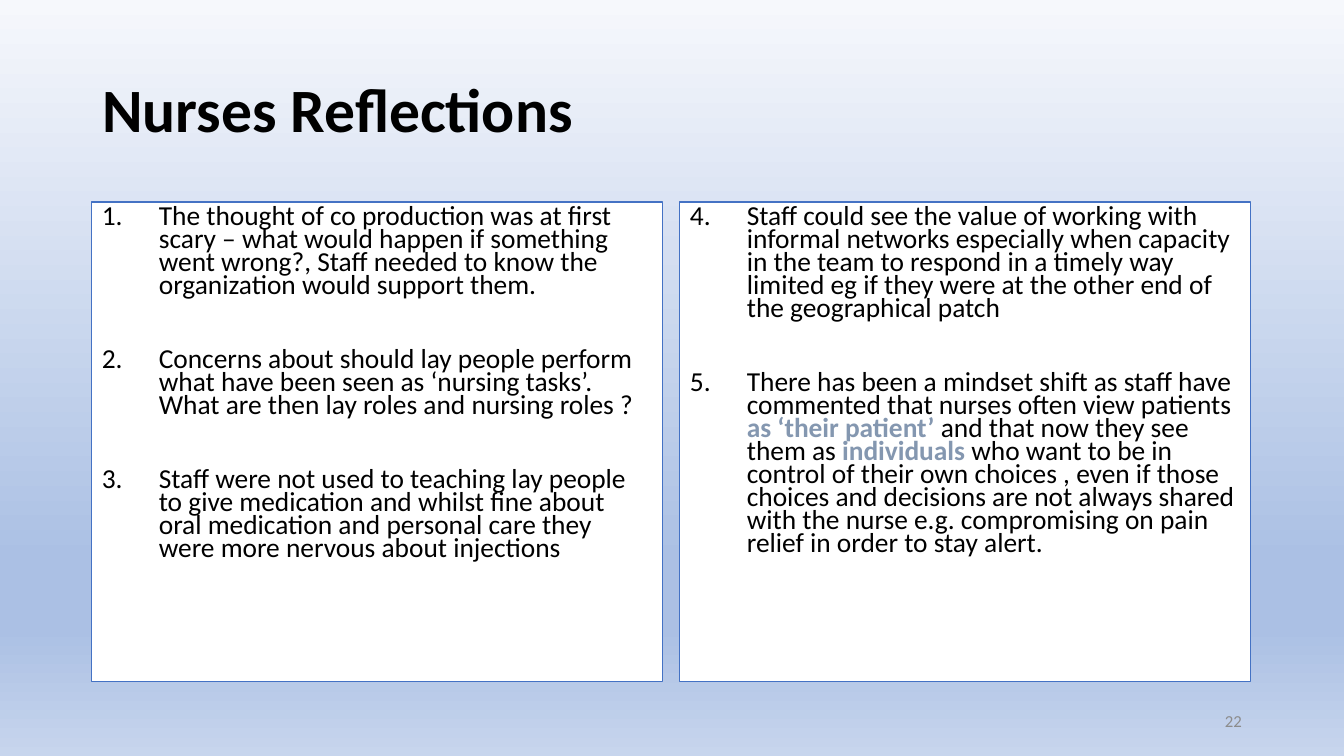
from dataclasses import dataclass

from lxml import etree
from pptx import Presentation
from pptx.dml.color import RGBColor
from pptx.enum.shapes import MSO_SHAPE
from pptx.enum.text import MSO_ANCHOR, MSO_AUTO_SIZE, PP_ALIGN
from pptx.oxml.ns import qn
from pptx.util import Emu, Pt

RECTANGLE = MSO_SHAPE.RECTANGLE
TOP, MIDDLE = MSO_ANCHOR.TOP, MSO_ANCHOR.MIDDLE
LEFT, RIGHT = PP_ALIGN.LEFT, PP_ALIGN.RIGHT
NO_AUTOFIT = MSO_AUTO_SIZE.NONE
TITLE_ONLY = 5
EMU_PER_PX = 12192000 / 1344


@dataclass(frozen=True)
class Theme:
    font: str = "Calibri"
    ink: str = "000000"
    accent: str = "8497B0"
    muted: str = "8C8C8C"
    panel: str = "FFFFFF"
    border: str = "4472C4"
    backdrop: tuple = ((0, "F6F8FC"), (74, "ABC0E4"), (83, "ABC0E4"), (100, "C7D5ED"))
    title_size: float = 44
    body_size: float = 19.6
    number_size: float = 12


def px(length):
    return Emu(round(length * EMU_PER_PX))


def add_text(paragraph, text, *, font, size, color, bold=False):
    run = paragraph.add_run()
    run.text = text
    run.font.name = font
    run.font.size = Pt(size)
    run.font.bold = bold
    run.font.color.rgb = RGBColor.from_string(color)


class ReflectionDeck:
    INDENT = 57
    FIRST_SPACE = 10
    ITEM_SPACE = 36.5

    def __init__(self, theme):
        self.theme = theme
        self.deck = Presentation()
        self.deck.slide_width, self.deck.slide_height = px(1344), px(756)
        self.slide = self.deck.slides.add_slide(self.deck.slide_layouts[TITLE_ONLY])

    def paint_backdrop(self):
        fill = self.slide.background.fill
        fill.gradient()
        fill.gradient_angle = 270
        stops = self.slide.element.find(".//" + qn("a:gsLst"))
        for default_stop in list(stops):
            stops.remove(default_stop)
        for percent, color in self.theme.backdrop:
            stop = etree.SubElement(stops, qn("a:gs"), pos=str(percent * 1000))
            etree.SubElement(stop, qn("a:srgbClr"), val=color)

    def prepare_frame(self, shape, anchor):
        frame = shape.text_frame
        frame.word_wrap = True
        frame.auto_size = NO_AUTOFIT
        frame.vertical_anchor = anchor
        return frame

    def title(self, text, left, top, width, height):
        heading = self.slide.shapes.title
        heading.left, heading.top = px(left), px(top)
        heading.width, heading.height = px(width), px(height)
        line = self.prepare_frame(heading, MIDDLE).paragraphs[0]
        line.alignment = LEFT
        line.line_spacing = 0.9
        add_text(line, text, font=self.theme.font, size=self.theme.title_size,
                 color=self.theme.ink, bold=True)

    def numbered_panel(self, items, first_number, left, top, width, height):
        """Each item is a list of (text, emphasised) pairs."""
        panel = self.slide.shapes.add_shape(
            RECTANGLE, px(left), px(top), px(width), px(height))
        panel.shadow.inherit = False
        panel.fill.solid()
        panel.fill.fore_color.rgb = RGBColor.from_string(self.theme.panel)
        panel.line.color.rgb = RGBColor.from_string(self.theme.border)
        panel.line.width = Pt(0.75)
        frame = self.prepare_frame(panel, TOP)
        for index, item in enumerate(items):
            paragraph = frame.add_paragraph() if index else frame.paragraphs[0]
            paragraph.alignment = LEFT
            paragraph.line_spacing = 0.7
            paragraph.space_before = Pt(self.ITEM_SPACE if index else self.FIRST_SPACE)
            self.number(paragraph, first_number)
            for text, emphasised in item:
                add_text(paragraph, text, font=self.theme.font, size=self.theme.body_size,
                         color=self.theme.accent if emphasised else self.theme.ink,
                         bold=emphasised)

    def number(self, paragraph, start):
        properties = paragraph._p.get_or_add_pPr()
        properties.set("marL", str(px(self.INDENT)))
        properties.set("indent", str(-px(self.INDENT)))
        etree.SubElement(properties, qn("a:buFont"), typeface=self.theme.font)
        etree.SubElement(properties, qn("a:buAutoNum"), type="arabicPeriod", startAt=str(start))

    def page_number(self, text, left, top, width, height):
        box = self.slide.shapes.add_textbox(px(left), px(top), px(width), px(height))
        line = self.prepare_frame(box, MIDDLE).paragraphs[0]
        line.alignment = RIGHT
        add_text(line, text, font=self.theme.font, size=self.theme.number_size,
                 color=self.theme.muted)


REFLECTIONS = [
    [
        [("The thought of co production was at first scary – what would happen if "
          "something went wrong?, Staff needed to know the organization would "
          "support them.", False)],
        [("Concerns about should lay people perform what have been seen as "
          "‘nursing tasks’. What are then lay roles and nursing roles ?", False)],
        [("Staff were not used to teaching lay people to give medication and whilst "
          "fine about oral medication and personal care they were more nervous "
          "about injections", False)],
    ],
    [
        [("Staff could see the value of working with informal networks especially "
          "when capacity in the team to respond in a timely way limited eg if they "
          "were at the other end of the geographical patch", False)],
        [("There has been a mindset shift as staff have commented that nurses often "
          "view patients ", False),
         ("as ‘their patient’ ", True),
         ("and that now they see them as ", False),
         ("individuals", True),
         (" who want to be in control of their own choices , even if those choices "
          "and decisions are not always shared with the nurse e.g. compromising on "
          "pain relief in order to stay alert.", False)],
    ],
]


def main():
    reflections = ReflectionDeck(Theme())
    reflections.paint_backdrop()
    reflections.title("Nurses Reflections", 92, 40, 1159, 146)
    first_number = 1
    for column, items in enumerate(REFLECTIONS):
        reflections.numbered_panel(items, first_number, 92 + 588 * column, 202, 571, 480)
        first_number += len(items)
    reflections.page_number("22", 950, 701, 302, 40)
    reflections.deck.save("out.pptx")


if __name__ == "__main__":
    main()
